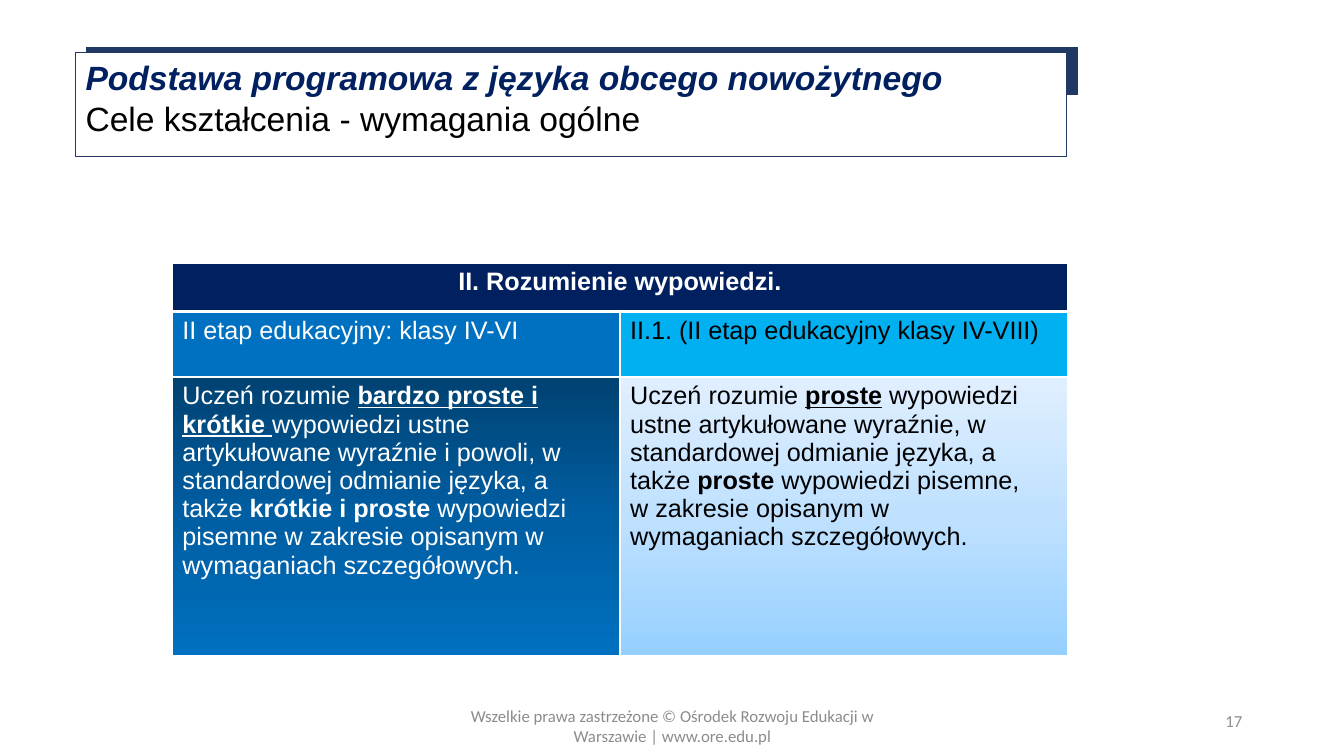
from lxml import etree
from pptx import Presentation
from pptx.dml.color import RGBColor
from pptx.enum import shapes, text
from pptx.oxml import parse_xml
from pptx.oxml.ns import nsdecls, qn
from pptx.util import Inches, Pt

WHITE = RGBColor(0xFF, 0xFF, 0xFF)
BLACK = RGBColor(0, 0, 0)
NAVY = RGBColor(0x00, 0x20, 0x60)
FRAME = RGBColor(0x20, 0x38, 0x64)
BLUE = RGBColor(0x00, 0x70, 0xC0)
SKY = RGBColor(0x00, 0xB0, 0xF0)
GREY = RGBColor(0x8C, 0x8C, 0x8C)
DEEP_BLUES = [RGBColor(0x00, 0x42, 0x72), RGBColor(0x00, 0x5E, 0xA2), BLUE]
PALE_BLUES = [RGBColor(0x96, 0xD0, 0xFF), RGBColor(0xBF, 0xE1, 0xFF),
              RGBColor(0xE0, 0xEF, 0xFF)]
LEFT, CENTER, RIGHT = text.PP_ALIGN.LEFT, text.PP_ALIGN.CENTER, text.PP_ALIGN.RIGHT


def write(tf, paragraphs, size, color, align=LEFT, font="Arial"):
    """Fill a frame; each paragraph is a list of (text, style), style being letters of b, i, u."""
    tf.word_wrap = True
    for i, runs in enumerate(paragraphs):
        p = tf.add_paragraph() if i else tf.paragraphs[0]
        p.alignment = align
        for words, style in runs:
            r = p.add_run()
            r.text = words
            r.font.name = font
            r.font.size = Pt(size)
            r.font.color.rgb = color
            r.font.bold = "b" in style
            r.font.italic = "i" in style
            r.font.underline = "u" in style


def gradient(colors, degrees):
    stops = "".join(f'<a:gs pos="{pos}"><a:srgbClr val="{color}"/></a:gs>'
                    for pos, color in zip((0, 50000, 100000), colors))
    return parse_xml(f'<a:gradFill {nsdecls("a")} rotWithShape="1"><a:gsLst>{stops}</a:gsLst>'
                     f'<a:lin ang="{degrees * 60000}" scaled="0"/></a:gradFill>')


prs = Presentation()
prs.slide_width, prs.slide_height = Inches(13.33), Inches(7.5)
s = prs.slides.add_slide(prs.slide_layouts[6])

# Title box with a dark strip behind it
for x, y, height, fill in [(0.86, 0.47, 0.47, FRAME), (0.75, 0.52, 1.03, WHITE)]:
    title = s.shapes.add_shape(shapes.MSO_SHAPE.RECTANGLE,
                               Inches(x), Inches(y), Inches(9.83), Inches(height))
    title.shadow.inherit = False
    title.fill.solid()
    title.fill.fore_color.rgb = fill
    title.line.color.rgb = FRAME
    title.line.width = Pt(0.75)
tf = title.text_frame
tf.vertical_anchor = text.MSO_ANCHOR.TOP
write(tf, [[("Podstawa programowa z języka obcego nowożytnego", "bi")],
           [("Cele kształcenia - wymagania ogólne", "")]], 24, BLACK)
tf.paragraphs[0].runs[0].font.color.rgb = NAVY

# Comparison table
table = s.shapes.add_table(3, 2, Inches(1.71), Inches(2.61), Inches(8.88), Inches(3.89)).table
table.first_row = table.horz_banding = False
for column in table.columns:
    column.width = Inches(4.44)
for row, height in zip(table.rows, (0.48, 0.65, 2.76)):
    row.height = Inches(height)
table.cell(0, 0).merge(table.cell(0, 1))

younger = [
    [("Uczeń rozumie ", ""), ("bardzo proste i krótkie ", "bu"),
     ("wypowiedzi ustne artykułowane wyraźnie i powoli, w", "")],
    [("standardowej odmianie języka, a także ", ""), ("krótkie i proste ", "b"),
     ("wypowiedzi pisemne w zakresie opisanym w", "")],
    [("wymaganiach szczegółowych.", "")],
]
older = [
    [("Uczeń rozumie ", ""), ("proste", "bu"),
     (" wypowiedzi ustne artykułowane wyraźnie, w", "")],
    [("standardowej odmianie języka, a także ", ""), ("proste", "b"),
     (" wypowiedzi pisemne,", "")],
    [("w zakresie opisanym w", "")],
    [("wymaganiach szczegółowych.", "")],
]
cells = [
    (0, 0, [[("II. Rozumienie wypowiedzi.", "b")]], WHITE, CENTER, NAVY),
    (0, 1, [], WHITE, CENTER, NAVY),
    (1, 0, [[("II etap edukacyjny: klasy IV-VI", "")]], WHITE, LEFT, BLUE),
    (1, 1, [[("II.1. (II etap edukacyjny klasy IV-VIII)", "")]], BLACK, LEFT, SKY),
    (2, 0, younger, WHITE, LEFT, gradient(DEEP_BLUES, 90)),
    (2, 1, older, BLACK, LEFT, gradient(PALE_BLUES, 270)),
]
for row, col, paragraphs, color, align, fill in cells:
    cell = table.cell(row, col)
    write(cell.text_frame, paragraphs, 18, color, align)
    tcPr = cell._tc.get_or_add_tcPr()
    for side in "LRTB":
        under_header = (row, side) in [(0, "B"), (1, "T")]
        width = Pt(3 if under_header else 1)
        tcPr.append(parse_xml(
            f'<a:ln{side} {nsdecls("a")} w="{width}"><a:solidFill>'
            f'<a:srgbClr val="{WHITE}"/></a:solidFill></a:ln{side}>'))
    if isinstance(fill, RGBColor):
        solid = etree.SubElement(tcPr, qn("a:solidFill"))
        etree.SubElement(solid, qn("a:srgbClr"), val=str(fill))
    else:
        tcPr.append(fill)

# Page number and footer
for x, width, words, align, anchor in [
    (9.42, 3, "17", RIGHT, text.MSO_ANCHOR.MIDDLE),
    (4.42, 4.5, "Wszelkie prawa zastrzeżone © Ośrodek Rozwoju Edukacji w Warszawie | www.ore.edu.pl",
     CENTER, text.MSO_ANCHOR.TOP),
]:
    tf = s.shapes.add_textbox(Inches(x), Inches(6.95), Inches(width), Inches(0.4)).text_frame
    tf.vertical_anchor = anchor
    write(tf, [[(words, "")]], 12, GREY, align, "Calibri")

prs.save("out.pptx")
